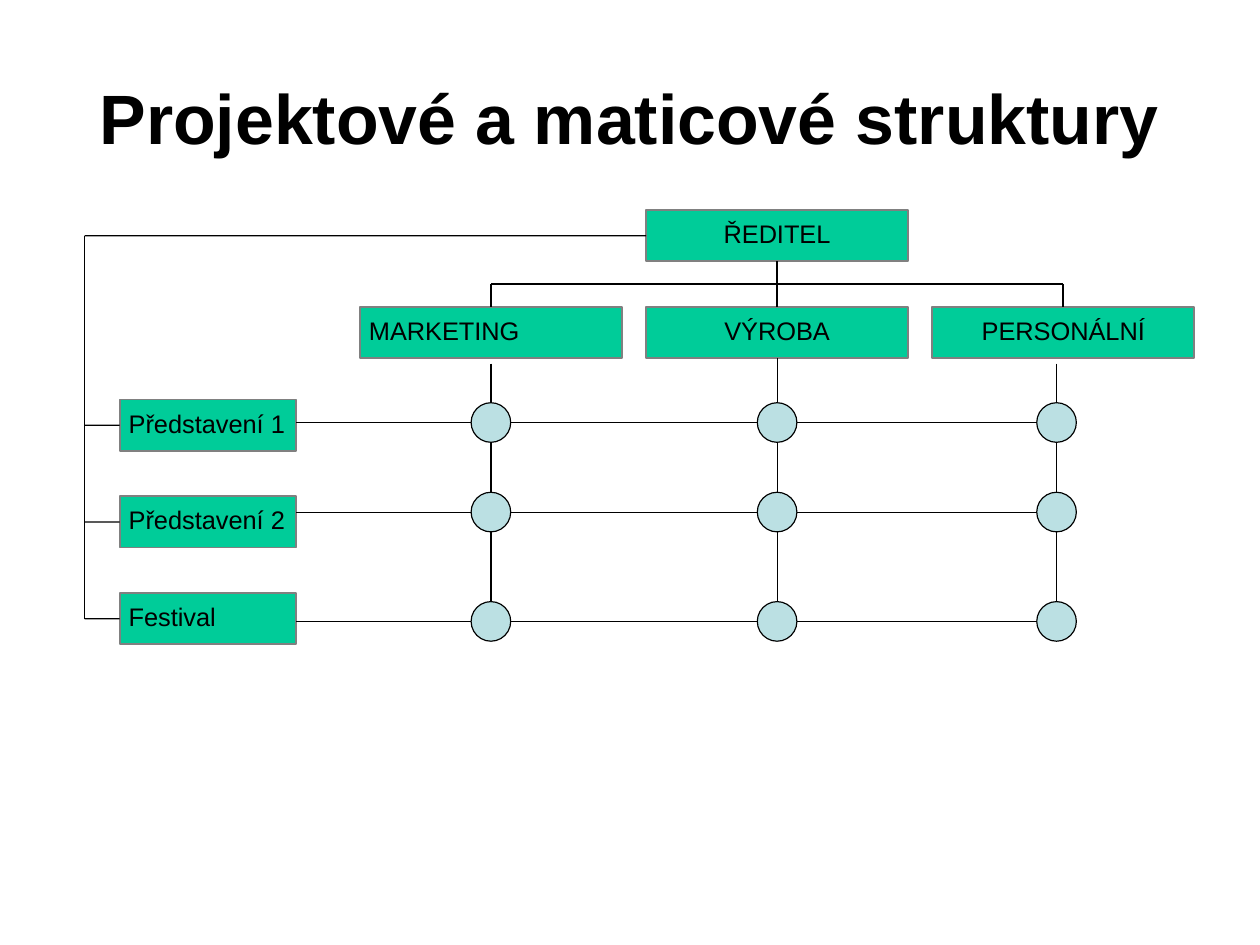
import pptx
import pptx.util
import pptx.dml.color
import pptx.enum.shapes
import pptx.enum.text
import pptx.oxml.ns
from lxml import etree

Cm, Pt = pptx.util.Cm, pptx.util.Pt
RGBColor = pptx.dml.color.RGBColor
MSO_SHAPE = pptx.enum.shapes.MSO_SHAPE
STRAIGHT = pptx.enum.shapes.MSO_CONNECTOR.STRAIGHT
PP_ALIGN = pptx.enum.text.PP_ALIGN
MIDDLE = pptx.enum.text.MSO_ANCHOR.MIDDLE

# Content
TITLE = "Projektové a maticové struktury"
DIRECTOR = "ŘEDITEL"
DEPARTMENTS = [("MARKETING", PP_ALIGN.LEFT), ("VÝROBA", PP_ALIGN.CENTER),
               ("PERSONÁLNÍ", PP_ALIGN.CENTER)]
PROJECTS = ["Představení 1", "Představení 2", "Festival"]

# Colours and font
BLACK = RGBColor(0x00, 0x00, 0x00)
GREEN = RGBColor(0x00, 0xCC, 0x99)
GREY = RGBColor(0x80, 0x80, 0x80)
PALE_BLUE = RGBColor(0xBB, 0xE0, 0xE3)
FONT = "Arial"
THIN, THICK = 0.75, 1.13

# Layout in centimetres
BOX_HEIGHT, ROW_PITCH = 1.14, 2.15
DEPARTMENT_WIDTH, DEPARTMENT_LEFT, DEPARTMENT_PITCH = 5.82, 8.0, 6.36
PROJECT_WIDTH, PROJECT_LEFT, PROJECT_TOP = 3.92, 2.66, 8.88
DIRECTOR_TOP = 4.67
DEPARTMENT_TOP = DIRECTOR_TOP + ROW_PITCH
BUS_Y = 6.31
SPINE_X = 1.88
GRID_X = [10.91, 17.27, 23.48]
GRID_Y = [9.39, 11.38, 13.81]
GRID_TOP = 8.08
NODE_SIZE = 0.88
TOP, LEFT, BOTTOM = 0, 1, 2

presentation = pptx.Presentation()
presentation.slide_width, presentation.slide_height = Cm(28), Cm(21)
slide = presentation.slides.add_slide(presentation.slide_layouts[5])


def format_text(text_frame, text, size, alignment, bold=False):
    text_frame.text = text
    text_frame.vertical_anchor = MIDDLE
    paragraph = text_frame.paragraphs[0]
    paragraph.alignment = alignment
    font = paragraph.runs[0].font
    font.name, font.size, font.bold = FONT, Pt(size), bold
    font.color.rgb = BLACK


def add_filled(kind, left, top, width, height, fill, line, line_width):
    shape = slide.shapes.add_shape(kind, Cm(left), Cm(top), Cm(width), Cm(height))
    shape.shadow.inherit = False
    shape.fill.solid()
    shape.fill.fore_color.rgb = fill
    shape.line.color.rgb = line
    shape.line.width = Pt(line_width)
    return shape


def add_box(text, left, top, width, alignment):
    box = add_filled(MSO_SHAPE.RECTANGLE, left, top, width, BOX_HEIGHT, GREEN, GREY, THICK)
    frame = box.text_frame
    frame.margin_left = frame.margin_right = Cm(0.2)
    frame.margin_top, frame.margin_bottom = Cm(0), Cm(0.1)
    frame.word_wrap = False
    format_text(frame, text, 16, alignment)
    return box


def add_line(x1, y1, x2, y2, width=THIN, begin=None, end=None):
    line = slide.shapes.add_connector(STRAIGHT, Cm(x1), Cm(y1), Cm(x2), Cm(y2))
    line.line.color.rgb = BLACK
    line.line.width = Pt(width)
    etree.SubElement(line._element.spPr, pptx.oxml.ns.qn("a:effectLst"))
    if begin:
        line.begin_connect(*begin)
    if end:
        line.end_connect(*end)


# Title
title = slide.shapes.title
title.left, title.top, title.width, title.height = Cm(1.4), Cm(0.84), Cm(25.2), Cm(3.5)
frame = title.text_frame
frame.margin_left = frame.margin_right = frame.margin_top = frame.margin_bottom = 0
format_text(frame, TITLE, 44, PP_ALIGN.CENTER, bold=True)

# Boxes
department_lefts = [DEPARTMENT_LEFT + i * DEPARTMENT_PITCH for i in range(len(DEPARTMENTS))]
department_centres = [left + DEPARTMENT_WIDTH / 2 for left in department_lefts]
project_tops = [PROJECT_TOP + i * ROW_PITCH for i in range(len(PROJECTS))]
director = add_box(DIRECTOR, department_lefts[1], DIRECTOR_TOP, DEPARTMENT_WIDTH, PP_ALIGN.CENTER)
departments = [add_box(name, left, DEPARTMENT_TOP, DEPARTMENT_WIDTH, alignment)
               for (name, alignment), left in zip(DEPARTMENTS, department_lefts)]
projects = [add_box(name, PROJECT_LEFT, top, PROJECT_WIDTH, PP_ALIGN.LEFT)
            for name, top in zip(PROJECTS, project_tops)]

# Director to departments
add_line(department_centres[0], BUS_Y, department_centres[-1], BUS_Y, THICK)
for department, x in zip(departments, department_centres):
    begin = (director, BOTTOM) if department is departments[1] else None
    add_line(x, BUS_Y, x, DEPARTMENT_TOP, THICK, begin, (department, TOP))

# Director to projects
spine_top = DIRECTOR_TOP + BOX_HEIGHT / 2
project_centres = [top + BOX_HEIGHT / 2 for top in project_tops]
add_line(department_lefts[1], spine_top, SPINE_X, spine_top, begin=(director, LEFT))
add_line(SPINE_X, spine_top, SPINE_X, project_centres[-1])
for project, y in zip(projects, project_centres):
    add_line(SPINE_X, y, PROJECT_LEFT, y, end=(project, LEFT))

# Matrix lines
for column, x in enumerate(GRID_X):
    begin = (departments[1], BOTTOM) if column == 1 else None
    add_line(x, GRID_TOP, x, GRID_Y[-1], begin=begin)
for y in GRID_Y:
    add_line(PROJECT_LEFT + PROJECT_WIDTH, y, GRID_X[-1], y)

# Matrix nodes
for y in GRID_Y:
    for x in GRID_X:
        add_filled(MSO_SHAPE.OVAL, x - NODE_SIZE / 2, y - NODE_SIZE / 2,
                   NODE_SIZE, NODE_SIZE, PALE_BLUE, BLACK, THIN)

presentation.save("out.pptx")
